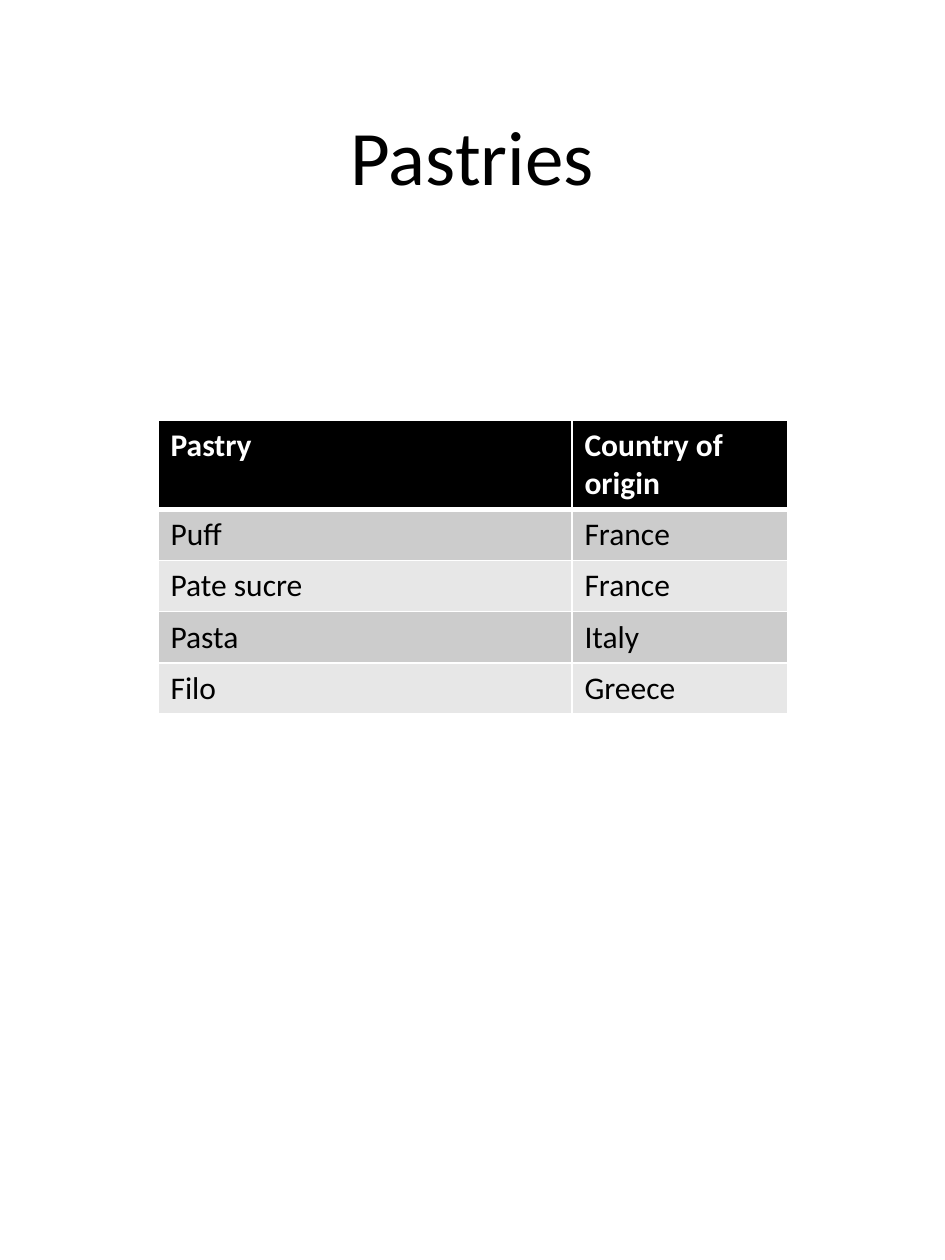
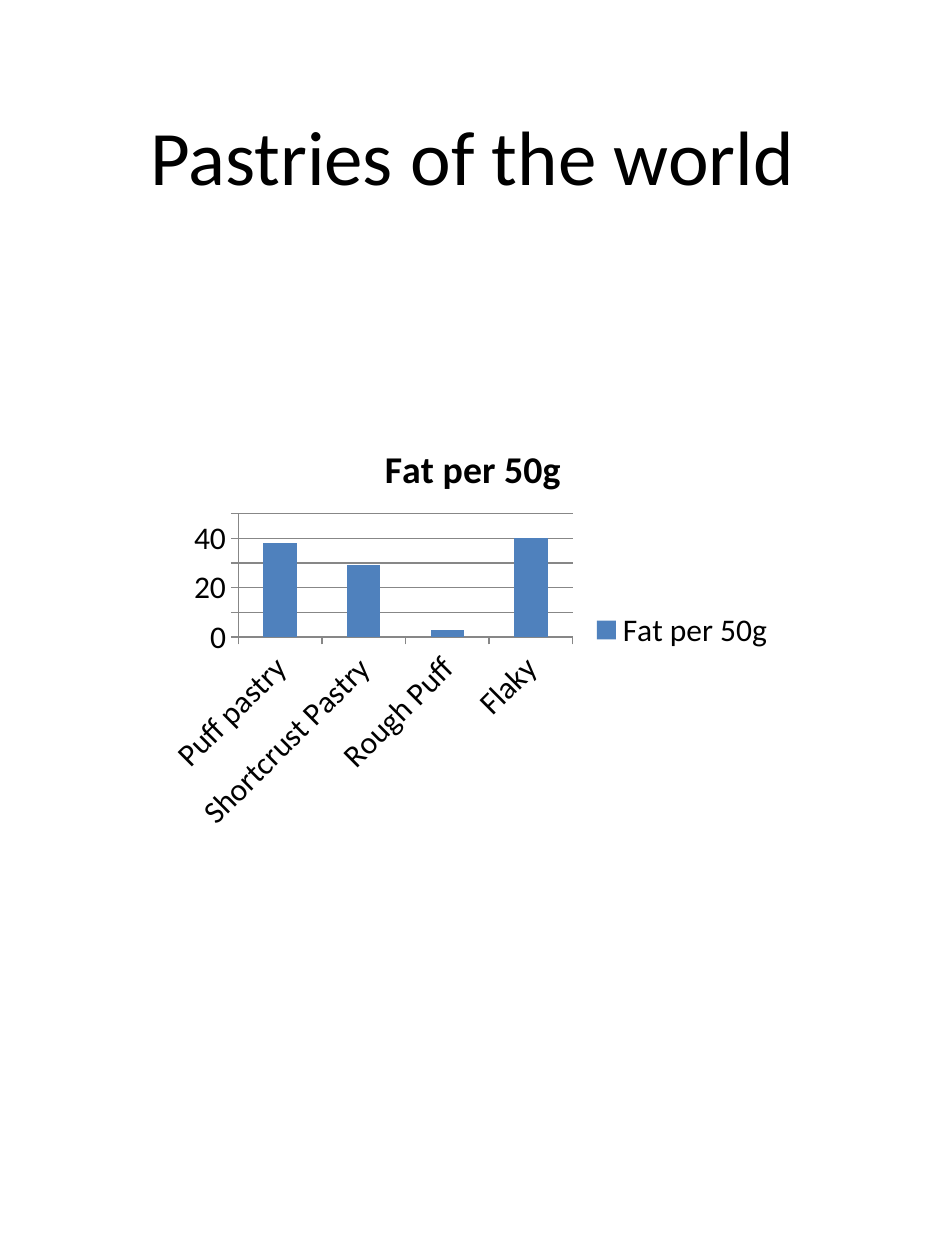
from pptx import Presentation
from pptx.chart.data import CategoryChartData
from pptx.dml.color import RGBColor
from pptx.enum.chart import XL_CHART_TYPE, XL_LEGEND_POSITION, XL_TICK_MARK
from pptx.enum.text import MSO_ANCHOR, PP_ALIGN
from pptx.oxml import parse_xml
from pptx.oxml.ns import nsdecls
from pptx.util import Pt

COLUMN = XL_CHART_TYPE.COLUMN_CLUSTERED
LEGEND_RIGHT = XL_LEGEND_POSITION.RIGHT
TICK_OUT = XL_TICK_MARK.OUTSIDE
MIDDLE = MSO_ANCHOR.MIDDLE
CENTER = PP_ALIGN.CENTER

PX = 914400 // 126  # EMU per px
FONT = "Calibri"
BLACK = RGBColor(0x00, 0x00, 0x00)
WHITE = RGBColor(0xFF, 0xFF, 0xFF)
BAND_DARK = RGBColor(0xCC, 0xCC, 0xCC)
BAND_LIGHT = RGBColor(0xE7, 0xE7, 0xE7)
BLUE = RGBColor(0x4F, 0x81, 0xBD)
GREY = RGBColor(0x87, 0x87, 0x87)

# Content area shared by the table and the chart
LEFT, TOP, WIDTH = 158 * PX, 420 * PX, 630 * PX

prs = Presentation()
prs.slide_width, prs.slide_height = 945 * PX, 1260 * PX


def style_font(font, size, color=BLACK, bold=False):
    font.name, font.size, font.bold = FONT, Pt(size), bold
    font.color.rgb = color


def add_titled_slide(title):
    s = prs.slides.add_slide(prs.slide_layouts[5])
    sp = s.shapes.title
    sp.left, sp.top, sp.width, sp.height = 47 * PX, 50 * PX, 851 * PX, 210 * PX
    tf = sp.text_frame
    tf.text = title
    tf.vertical_anchor = MIDDLE
    p = tf.paragraphs[0]
    p.alignment = CENTER
    style_font(p.runs[0].font, 44)
    return s


# Slide 1: table of pastries
s = add_titled_slide("Pastries")
rows = [
    ("Pastry", "Country of origin"),
    ("Puff", "France"),
    ("Pate sucre", "France"),
    ("Pasta", "Italy"),
    ("Filo", "Greece"),
]
ROW_H = 51 * PX
table = s.shapes.add_table(len(rows), 2, LEFT, TOP, WIDTH, ROW_H * len(rows)).table
table.columns[0].width, table.columns[1].width = 414 * PX, 216 * PX
for i, row in enumerate(rows):
    table.rows[i].height = ROW_H
    header = i == 0
    fill = BLACK if header else BAND_DARK if i % 2 else BAND_LIGHT
    # White rules, thicker between header and body
    widths = {"L": 1, "R": 1, "T": 3 if i == 1 else 1, "B": 3 if header else 1}
    for j, text in enumerate(row):
        cell = table.cell(i, j)
        cell.text = text
        style_font(cell.text_frame.paragraphs[0].runs[0].font, 18,
                   WHITE if header else BLACK, header)
        tcPr = cell._tc.get_or_add_tcPr()
        for side, width in widths.items():
            tcPr.append(parse_xml(
                f'<a:ln{side} {nsdecls("a")} w="{Pt(width)}"><a:solidFill>'
                f'<a:srgbClr val="{WHITE}"/></a:solidFill></a:ln{side}>'))
        cell.fill.solid()
        cell.fill.fore_color.rgb = fill

# Slide 2: column chart of fat content
s = add_titled_slide("Pastries of the world")
data = CategoryChartData()
data.categories = ["Puff pastry", "Shortcrust Pastry", "Rough Puff", "Flaky"]
data.add_series("Fat per 50g", [38, 29, 3, 40])
chart = s.shapes.add_chart(COLUMN, LEFT, TOP, WIDTH, 420 * PX, data).chart
style_font(chart.font, 18)

chart.has_title = True
tf = chart.chart_title.text_frame
tf.text = "Fat per 50g"
style_font(tf.paragraphs[0].runs[0].font, 21.6, bold=True)
chart.chart_title.include_in_layout = False

chart.has_legend = True
chart.legend.position = LEGEND_RIGHT
chart.legend.include_in_layout = False

plot = chart.plots[0]
plot.gap_width = 150
plot.vary_by_categories = False
series_fill = plot.series[0].format.fill
series_fill.solid()
series_fill.fore_color.rgb = BLUE

for axis in (chart.category_axis, chart.value_axis):
    axis.major_tick_mark = TICK_OUT
    axis.format.line.color.rgb = GREY
chart.value_axis.has_major_gridlines = True
chart.value_axis.major_gridlines.format.line.color.rgb = GREY

prs.save("out.pptx")
